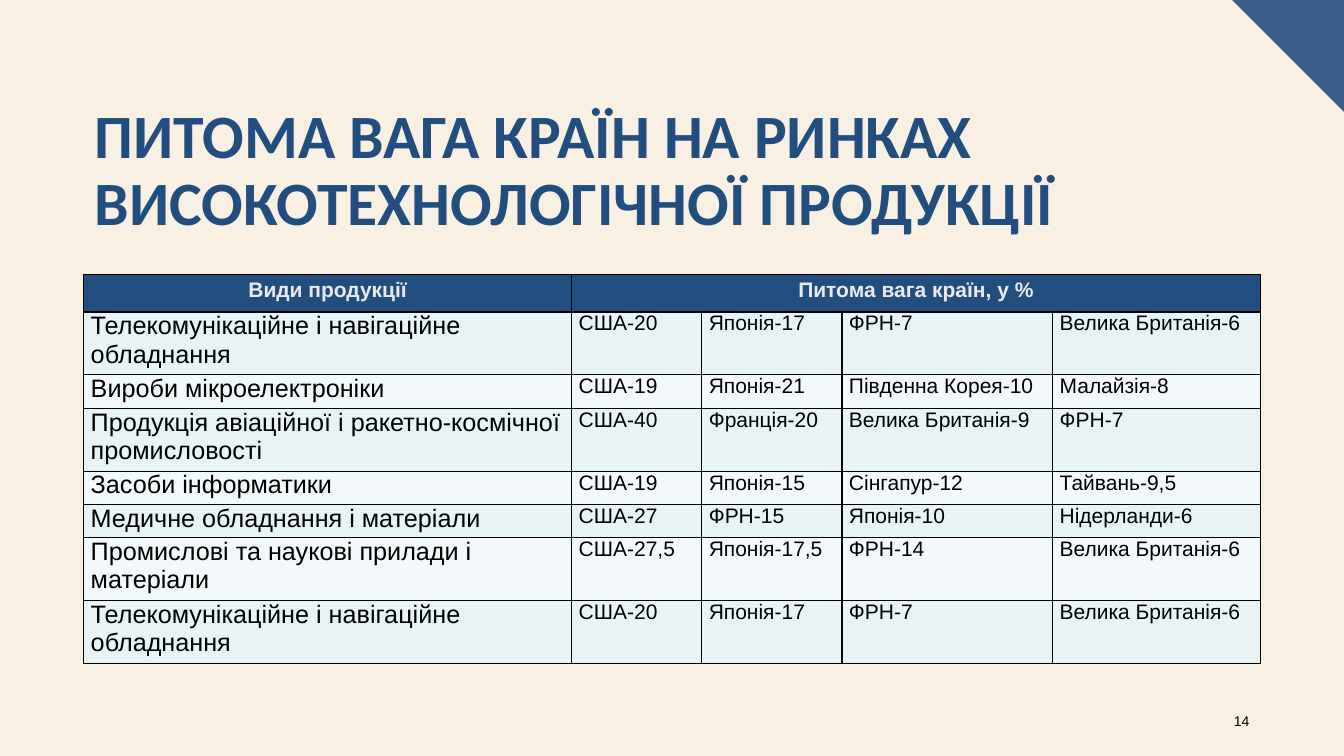
from dataclasses import dataclass

from lxml import etree
from pptx import Presentation
from pptx import util as u
from pptx.dml.color import RGBColor
from pptx.enum import text as t
from pptx.oxml import ns

W, H = u.Inches(13.33), u.Inches(7.5)
COLORS = {
    "paper": "F8F0E3", "corner": "385E88", "navy": "224E7F", "light": "EAEAEA",
    "black": "000000", "odd": "E7F3F4", "even": "F3F9FA",
}
ALIGN = t.PP_ALIGN

# Font formats; sizes in points
TITLE = {"name": "Calibri", "size": u.Pt(44), "bold": True}
HEADER = {"name": "Arial", "size": u.Pt(15), "bold": True}
PRODUCT = {"name": "Arial", "size": u.Pt(18), "bold": False}
SHARE = {"name": "Arial", "size": u.Pt(15), "bold": False}
NUMBER = {"name": "Arial", "size": u.Pt(10), "bold": False}

HEADER_INSETS = {"margin_left": u.Inches(0.09), "margin_right": u.Inches(0.09),
                 "margin_top": u.Inches(0.04), "margin_bottom": u.Inches(0.04)}
BODY_INSETS = {"margin_left": u.Inches(0.07), "margin_right": u.Inches(0.07),
               "margin_top": 0, "margin_bottom": 0}

# Percent of the slide's width and height
TABLE_LEFT, TABLE_TOP = 6.23, 36.27
COLUMN_WIDTHS = (36.31, 9.68, 10.43, 15.68, 15.45)
HEADER_HEIGHT = 5
ROW_HEIGHTS = {1: 4.4, 2: 8.33}  # by number of text lines


@dataclass
class Label:
    text: str
    box: tuple[float, float, float, float]
    font: dict
    color: str
    paragraph: dict


@dataclass
class Product:
    name: str
    shares: tuple[str, str, str, str]
    lines: int = 1


LABELS = (
    Label("ПИТОМА ВАГА КРАЇН НА РИНКАХ ВИСОКОТЕХНОЛОГІЧНОЇ ПРОДУКЦІЇ",
          (6.3, 13.07, 87.47, 19.33), TITLE, "navy",
          {"alignment": ALIGN.LEFT, "line_spacing": 0.9}),
    Label("14", (89.95, 92.67, 3.75, 5.33), NUMBER, "black",
          {"alignment": ALIGN.RIGHT, "space_after": u.Pt(6)}),
)
TELECOM = Product("Телекомунікаційне і навігаційне обладнання",
                  ("США-20", "Японія-17", "ФРН-7", "Велика Британія-6"), 2)
PRODUCTS = (
    TELECOM,
    Product("Вироби мікроелектроніки",
            ("США-19", "Японія-21", "Південна Корея-10", "Малайзія-8")),
    Product("Продукція авіаційної і ракетно-космічної промисловості",
            ("США-40", "Франція-20", "Велика Британія-9", "ФРН-7"), 2),
    Product("Засоби інформатики",
            ("США-19", "Японія-15", "Сінгапур-12", "Тайвань-9,5")),
    Product("Медичне обладнання і матеріали",
            ("США-27", "ФРН-15", "Японія-10", "Нідерланди-6")),
    Product("Промислові та наукові прилади і матеріали",
            ("США-27,5", "Японія-17,5", "ФРН-14", "Велика Британія-6"), 2),
    TELECOM,
)


def across(percent: float) -> int:
    return round(W * percent / 100)


def down(percent: float) -> int:
    return round(H * percent / 100)


def rgb(key: str) -> RGBColor:
    return RGBColor.from_string(COLORS[key])


def apply(target, values: dict) -> None:
    for name, value in values.items():
        setattr(target, name, value)


def paint(fill, color: str) -> None:
    fill.solid()
    fill.fore_color.rgb = rgb(color)


def write(tf, text: str, font: dict, color: str, paragraph: dict) -> None:
    p = tf.paragraphs[0]
    apply(p, paragraph)
    r = p.add_run()
    r.text = text
    apply(r.font, font)
    r.font.color.rgb = rgb(color)


def draw_corner(s) -> None:
    side = across(8.33)
    builder = s.shapes.build_freeform(W - side, 0)
    builder.add_line_segments([(W, 0), (W, side)], close=True)
    sp = builder.convert_to_shape()
    sp.shadow.inherit = False
    paint(sp.fill, "corner")
    sp.line.fill.background()


def draw_label(s, label: Label) -> None:
    left, top, width, height = label.box
    sp = s.shapes.add_textbox(across(left), down(top), across(width), down(height))
    tf = sp.text_frame
    apply(tf, {"word_wrap": True, "vertical_anchor": t.MSO_ANCHOR.MIDDLE})
    write(tf, label.text, label.font, label.color, label.paragraph)


def border(cell) -> None:
    tc_pr = cell._tc.get_or_add_tcPr()
    for edge in ("a:lnL", "a:lnR", "a:lnT", "a:lnB"):
        ln = etree.SubElement(tc_pr, ns.qn(edge), w=str(u.Pt(1)))
        fill = etree.SubElement(ln, ns.qn("a:solidFill"))
        etree.SubElement(fill, ns.qn("a:srgbClr"), val=COLORS["black"])


def draw_table(s) -> None:
    heights = [HEADER_HEIGHT] + [ROW_HEIGHTS[item.lines] for item in PRODUCTS]
    table = s.shapes.add_table(
        len(heights), len(COLUMN_WIDTHS), across(TABLE_LEFT), down(TABLE_TOP),
        across(sum(COLUMN_WIDTHS)), down(sum(heights))).table
    for column, width in zip(table.columns, COLUMN_WIDTHS):
        column.width = across(width)
    for row, height in zip(table.rows, heights):
        row.height = down(height)

    for i, row in enumerate(table.rows):
        for cell in row.cells:
            apply(cell, BODY_INSETS if i else HEADER_INSETS)
            border(cell)
            paint(cell.fill, ("even", "odd")[i % 2] if i else "navy")

    table.cell(0, 1).merge(table.cell(0, len(COLUMN_WIDTHS) - 1))
    for j, text in enumerate(("Види продукції", "Питома вага країн, у %")):
        write(table.cell(0, j).text_frame, text, HEADER, "light",
              {"alignment": ALIGN.CENTER})
    for i, item in enumerate(PRODUCTS, 1):
        write(table.cell(i, 0).text_frame, item.name, PRODUCT, "black",
              {"alignment": ALIGN.LEFT})
        for j, text in enumerate(item.shares, 1):
            write(table.cell(i, j).text_frame, text, SHARE, "black",
                  {"alignment": ALIGN.JUSTIFY})


def main() -> None:
    prs = Presentation()
    apply(prs, {"slide_width": W, "slide_height": H})
    s = prs.slides.add_slide(prs.slide_layouts[6])
    paint(s.background.fill, "paper")
    draw_corner(s)
    for label in LABELS:
        draw_label(s, label)
    draw_table(s)
    prs.save("out.pptx")


if __name__ == "__main__":
    main()
